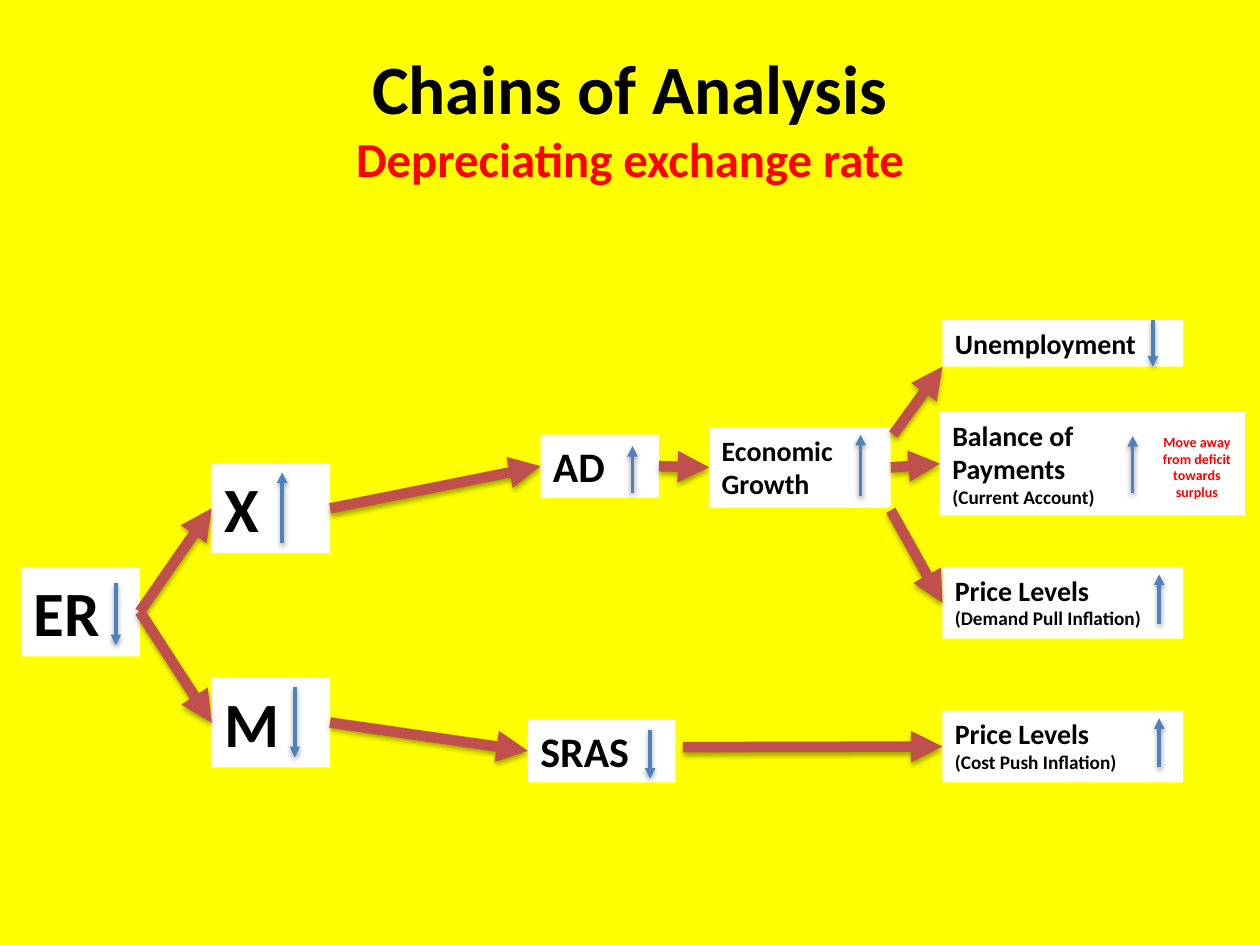
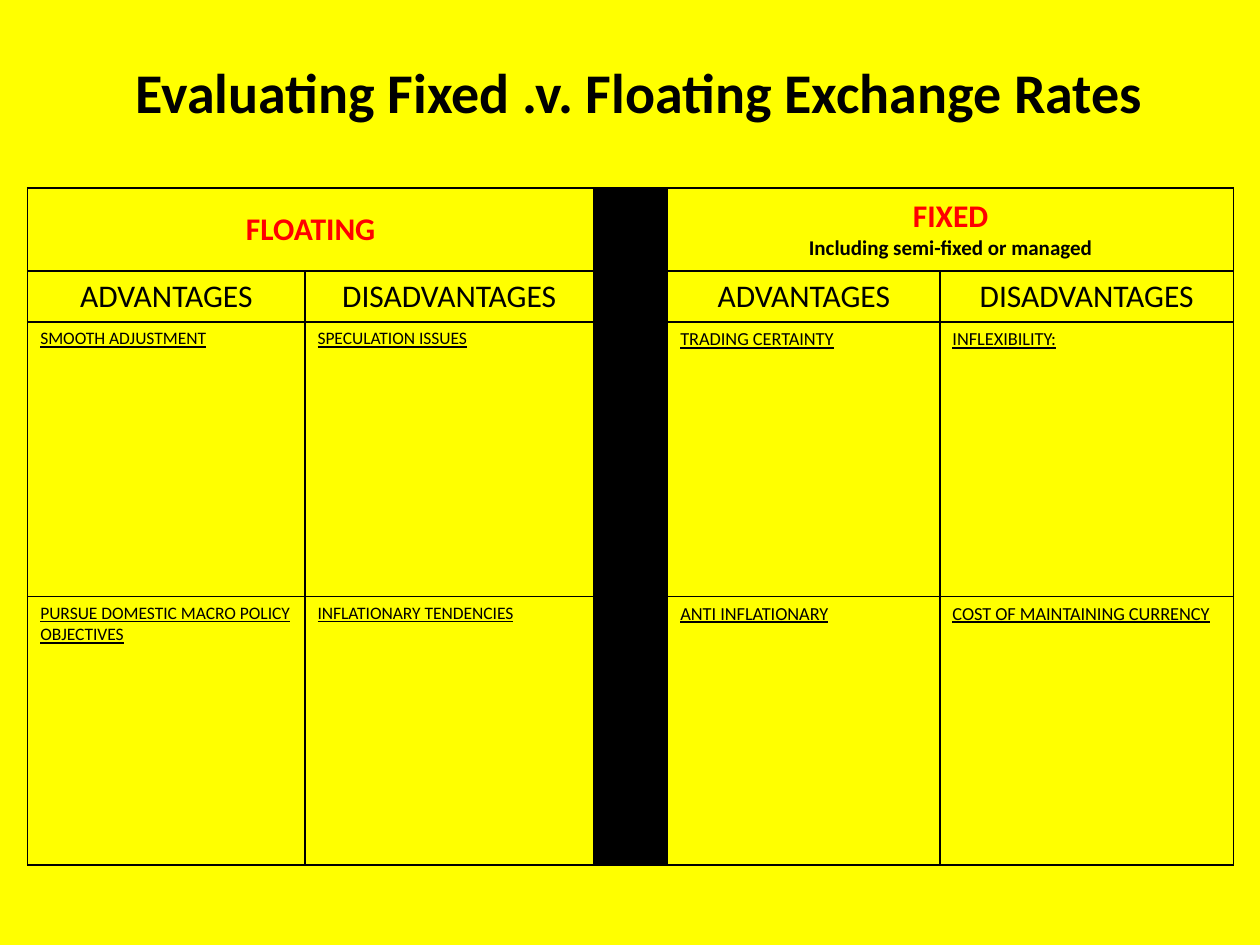
from dataclasses import dataclass

from lxml.etree import SubElement
from pptx import Presentation
from pptx.dml.color import RGBColor
from pptx.enum.shapes import MSO_CONNECTOR, MSO_SHAPE
from pptx.enum.text import MSO_ANCHOR, MSO_AUTO_SIZE, PP_ALIGN
from pptx.oxml.ns import qn
from pptx.util import Inches, Pt


@dataclass(frozen=True)
class Theme:
    font: str = "Calibri"
    background: str = "FFFF00"
    ink: str = "000000"
    accent: str = "FF0000"
    box: str = "FFFFFF"
    trend: str = "4F81BD"
    link: str = "C0504D"
    title: float = 39.6
    subtitle: float = 27.9
    long_title: float = 32
    symbol: float = 36
    aggregate: float = 24
    effect: float = 16
    detail: float = 11
    note: float = 8
    heading: float = 18
    subheading: float = 12
    floating_point: float = 10
    fixed_point: float = 10.5


THEME = Theme()
LEFT, RIGHT = 1, 3

# Columns and rows of the chain diagram, in inches
EFFECT_LEFT, EFFECT_WIDTH = 7.48, 1.91
SYMBOL_SIZE = (0.94, 0.71)

SYMBOL = [THEME.symbol]
AGGREGATE = [THEME.aggregate]
EFFECT = [THEME.effect]
EFFECT_DETAIL = [THEME.effect, THEME.detail]

# name: (lines, line sizes, (left, top, width, height), trend (x, from y, to y))
BOXES = {
    "rate": (["ER"], SYMBOL, (0.17, 4.5, *SYMBOL_SIZE), (0.92, 4.63, 5.12)),
    "exports": (["X"], SYMBOL, (1.68, 3.68, *SYMBOL_SIZE), (2.24, 4.31, 3.75)),
    "imports": (["M"], SYMBOL, (1.68, 5.38, *SYMBOL_SIZE), (2.34, 5.45, 6.01)),
    "demand": (["AD"], AGGREGATE, (4.29, 3.45, 0.94, 0.5), (5.02, 3.91, 3.54)),
    "supply": (["SRAS"], AGGREGATE, (4.19, 5.71, 1.17, 0.5), (5.16, 5.79, 6.18)),
    "growth": (["Economic", "Growth"], EFFECT * 2,
               (5.63, 3.39, 1.44, 0.64), (6.83, 3.94, 3.45)),
    "jobs": (["Unemployment"], EFFECT,
             (EFFECT_LEFT, 2.54, EFFECT_WIDTH, 0.37), (9.15, 2.54, 2.91)),
    "balance": (["Balance of", "Payments", "(Current Account)"], EFFECT + EFFECT_DETAIL,
                (7.46, 3.27, 2.42, 0.82), (8.99, 3.91, 3.46)),
    "demand pull": (["Price Levels", "(Demand Pull Inflation)"], EFFECT_DETAIL,
                    (EFFECT_LEFT, 4.5, EFFECT_WIDTH, 0.57), (9.2, 4.95, 4.56)),
    "cost push": (["Price Levels", "(Cost Push Inflation)"], EFFECT_DETAIL,
                  (EFFECT_LEFT, 5.64, EFFECT_WIDTH, 0.57), (9.2, 6.09, 5.7)),
}
BALANCE_NOTE = ("Move away from deficit towards surplus", (9.11, 3.39, 0.78, 0.64))

# Each end is a box name or a free point
LINKS = [
    ("rate", "exports"), ("rate", "imports"),
    ("exports", "demand"), ("imports", "supply"),
    ("demand", "growth"), ("growth", "balance"),
    ((7.09, 3.45), (EFFECT_LEFT, 2.91)),
    ((7.07, 4.05), "demand pull"),
    ((5.42, 5.93), "cost push"),
]

TABLE_AREA = (0.22, 1.49, 9.57, 5.37)
COLUMN_WIDTHS = [2.2, 2.29, 0.59, 2.16, 2.33]
ROW_HEIGHTS = [0.66, 0.4, 2.18, 2.13]
DIVIDER = 2
# first column: (heading lines, point size, rows of advantage and disadvantage)
REGIMES = {
    0: (["FLOATING"], THEME.floating_point, [
        ("SMOOTH ADJUSTMENT", "SPECULATION ISSUES"),
        ("PURSUE DOMESTIC MACRO POLICY OBJECTIVES", "INFLATIONARY TENDENCIES")]),
    3: (["FIXED", "Including semi-fixed or managed"], THEME.fixed_point, [
        ("TRADING CERTAINTY", "INFLEXIBILITY:"),
        ("ANTI INFLATIONARY", "COST OF MAINTAINING CURRENCY")]),
}
SIDES = ("ADVANTAGES", "DISADVANTAGES")


def inches(values):
    return [Inches(value) for value in values]


def rgb(colour):
    return RGBColor.from_string(colour)


def format_run(run, size, colour=THEME.ink, bold=True, underline=None):
    font = run.font
    font.name, font.size, font.bold, font.underline = THEME.font, Pt(size), bold, underline
    font.color.rgb = rgb(colour)


def write(text_frame, lines, sizes, align=PP_ALIGN.LEFT, colours=None, **style):
    """Fill a frame with one paragraph per line, each with its size and colour."""
    text_frame.text = "\n".join(lines)
    colours = colours or [THEME.ink] * len(lines)
    for paragraph, size, colour in zip(text_frame.paragraphs, sizes, colours):
        paragraph.alignment = align
        for run in paragraph.runs:
            format_run(run, size, colour, **style)


def add_titled_slide(presentation, area, parts):
    """Add a yellow slide whose title joins (text, size, colour) parts by line breaks."""
    slide = presentation.slides.add_slide(presentation.slide_layouts[5])
    slide.background.fill.solid()
    slide.background.fill.fore_color.rgb = rgb(THEME.background)
    title = slide.shapes.title
    title.left, title.top, title.width, title.height = inches(area)
    frame = title.text_frame
    frame.text = "\v".join(text for text, _, _ in parts)
    frame.auto_size = MSO_AUTO_SIZE.NONE
    frame.vertical_anchor = MSO_ANCHOR.MIDDLE
    paragraph = frame.paragraphs[0]
    paragraph.alignment = PP_ALIGN.CENTER
    for run, (_, size, colour) in zip(paragraph.runs, parts):
        format_run(run, size, colour)
    for line_break in paragraph._p.findall(qn("a:br")):
        SubElement(line_break, qn("a:rPr"), sz=str(round(parts[0][1] * 100)))
    return slide


def add_arrow(slide, start, end, colour, width, shadow_alpha, shadow_distance):
    arrow = slide.shapes.add_connector(MSO_CONNECTOR.STRAIGHT, *inches(start + end))
    arrow.line.color.rgb = rgb(colour)
    arrow.line.width = Pt(width)
    properties = arrow._element.spPr
    SubElement(properties.find(qn("a:ln")), qn("a:tailEnd"), type="triangle")
    effects = SubElement(properties, qn("a:effectLst"))
    shadow = SubElement(effects, qn("a:outerShdw"), blurRad="40000",
                        dist=str(shadow_distance), dir="5400000", rotWithShape="0")
    shadow_colour = SubElement(shadow, qn("a:srgbClr"), val=THEME.ink)
    SubElement(shadow_colour, qn("a:alpha"), val=str(shadow_alpha * 1000))
    return arrow


def add_box(slide, lines, sizes, area):
    box = slide.shapes.add_shape(MSO_SHAPE.RECTANGLE, *inches(area))
    box.shadow.inherit = False
    box.fill.solid()
    box.fill.fore_color.rgb = rgb(THEME.box)
    box.line.fill.background()
    box.text_frame.vertical_anchor = MSO_ANCHOR.TOP
    write(box.text_frame, lines, sizes)
    return box


def add_link(slide, boxes, source, target):
    start, end = [(0, 0) if point in boxes else point for point in (source, target)]
    link = add_arrow(slide, start, end, THEME.link, 6, 35, 23000)
    if source in boxes:
        link.begin_connect(boxes[source], RIGHT)
    if target in boxes:
        link.end_connect(boxes[target], LEFT)


def build_chain_slide(presentation):
    slide = add_titled_slide(presentation, (0.5, 0.3, 9, 1.25), [
        ("Chains of Analysis", THEME.title, THEME.ink),
        ("Depreciating exchange rate", THEME.subtitle, THEME.accent)])
    boxes = {}
    for name, (lines, sizes, area, (x, start_y, end_y)) in BOXES.items():
        boxes[name] = add_box(slide, lines, sizes, area)
        add_arrow(slide, (x, start_y), (x, end_y), THEME.trend, 2, 38, 20000)
    note, area = BALANCE_NOTE
    frame = slide.shapes.add_textbox(*inches(area)).text_frame
    frame.word_wrap = True
    write(frame, [note], [THEME.note], PP_ALIGN.CENTER, [THEME.accent])
    for source, target in LINKS:
        add_link(slide, boxes, source, target)


def style_cell(cell, is_divider):
    properties = cell._tc.get_or_add_tcPr()
    for side in ("lnL", "lnR", "lnT", "lnB"):
        border = SubElement(properties, qn(f"a:{side}"), w=str(Pt(1)))
        fill = SubElement(border, qn("a:solidFill"))
        SubElement(fill, qn("a:srgbClr"), val=THEME.ink)
    if is_divider:
        cell.fill.solid()
        cell.fill.fore_color.rgb = rgb(THEME.ink)
    else:
        cell.fill.background()


def fill_regime(table, first, heading, point_size, points):
    top = table.cell(0, first)
    top.merge(table.cell(0, first + 1))
    top.vertical_anchor = MSO_ANCHOR.MIDDLE
    write(top.text_frame, heading, [THEME.heading, THEME.subheading],
          PP_ALIGN.CENTER, [THEME.accent, THEME.ink])
    for offset, side in enumerate(SIDES):
        write(table.cell(1, first + offset).text_frame, [side], [THEME.heading],
              PP_ALIGN.CENTER, bold=False)
        for row, pair in enumerate(points, start=2):
            write(table.cell(row, first + offset).text_frame, [pair[offset]],
                  [point_size], bold=False, underline=True)


def build_evaluation_slide(presentation):
    slide = add_titled_slide(presentation, (0.15, 0.1, 9.85, 1.25), [
        ("Evaluating Fixed .v. Floating Exchange Rates", THEME.long_title, THEME.ink)])
    table = slide.shapes.add_table(
        len(ROW_HEIGHTS), len(COLUMN_WIDTHS), *inches(TABLE_AREA)).table
    table.first_row = table.horz_banding = False
    for column, width in zip(table.columns, COLUMN_WIDTHS):
        column.width = Inches(width)
    for row, height in zip(table.rows, ROW_HEIGHTS):
        row.height = Inches(height)
        for index, cell in enumerate(row.cells):
            style_cell(cell, index == DIVIDER)
    for first, regime in REGIMES.items():
        fill_regime(table, first, *regime)


def main():
    presentation = Presentation()
    presentation.slide_width, presentation.slide_height = Inches(10), Inches(7.5)
    build_chain_slide(presentation)
    build_evaluation_slide(presentation)
    presentation.save("out.pptx")


if __name__ == "__main__":
    main()
